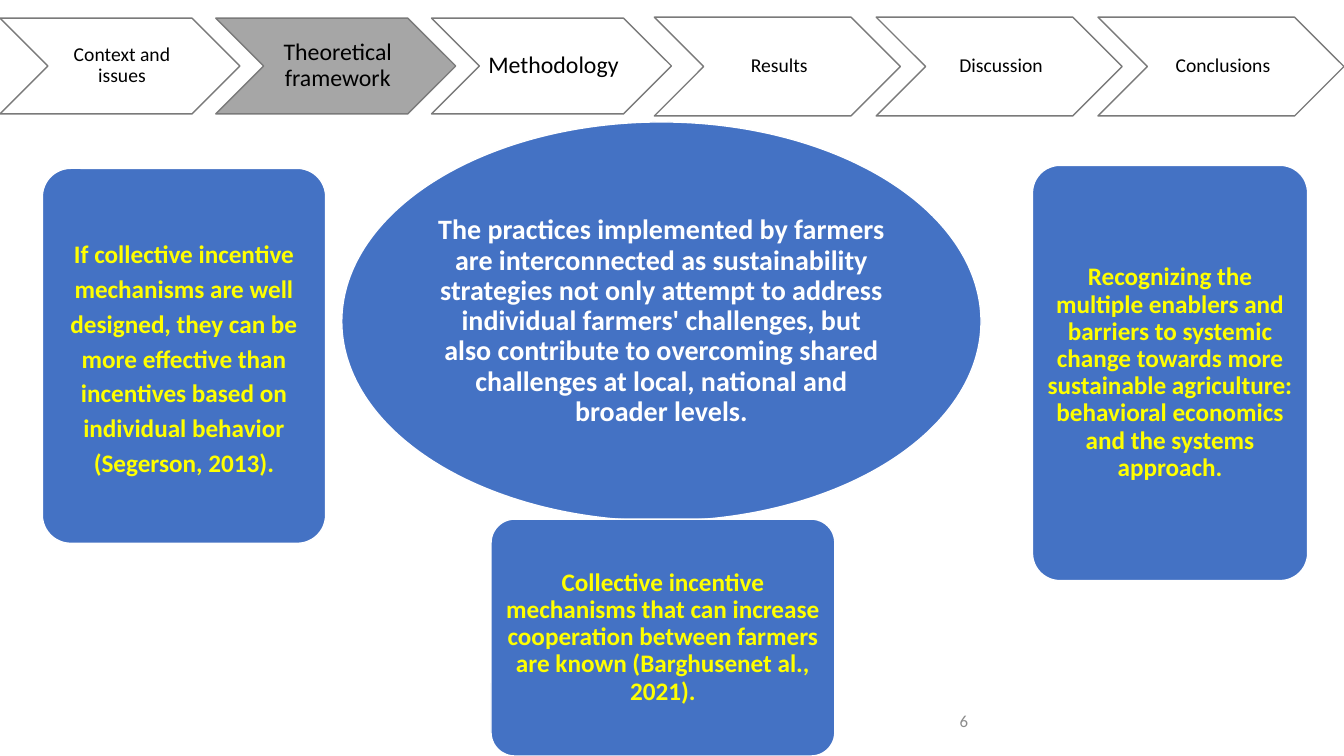
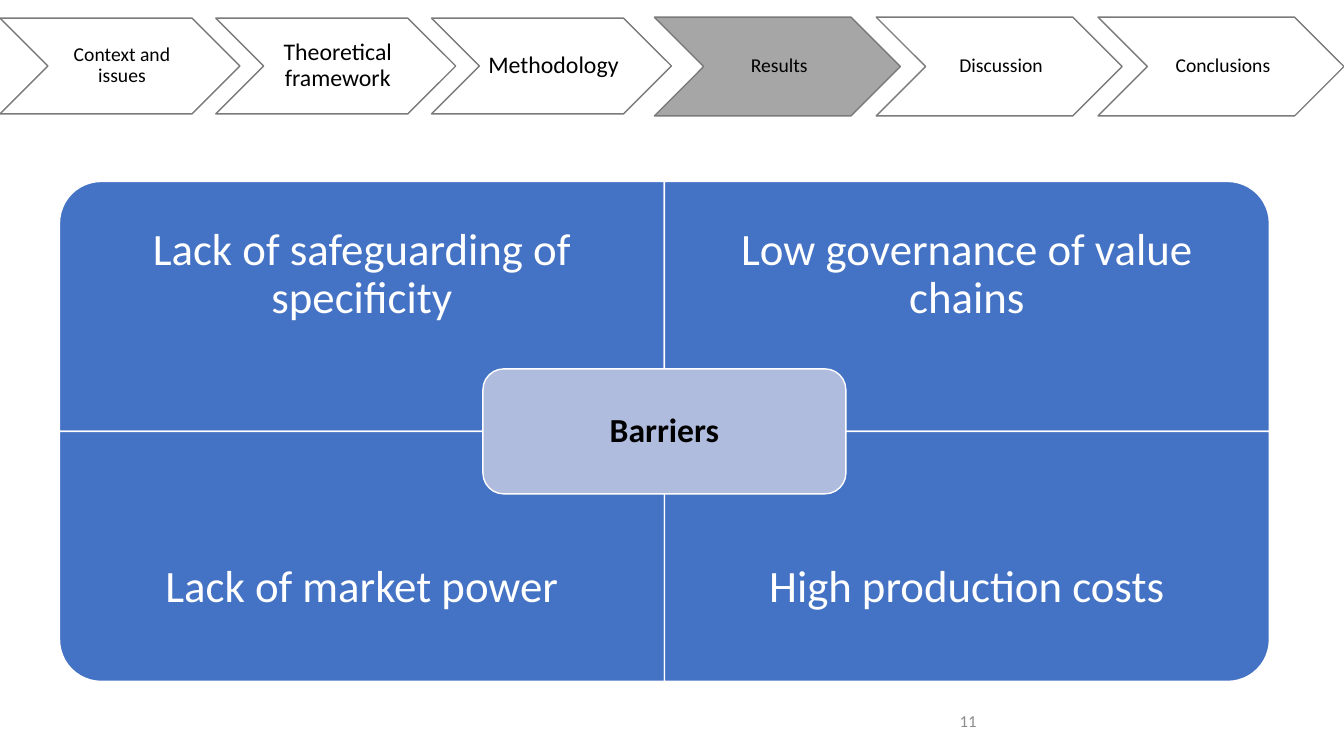
import pptx
import pptx.util
import pptx.dml.color
import pptx.enum.shapes
import pptx.enum.text

Inches = pptx.util.Inches
KIND = pptx.enum.shapes.MSO_SHAPE
BLUE, PALE, GREY, EDGE = "4472C4", "B0BCDE", "A6A6A6", "7A7A7A"
WHITE, BLACK, YELLOW, FAINT = "FFFFFF", "000000", "FFFF00", "8C8C8C"

# Progress bar: left, top, width, height, step, (label, size) list
STEPS = [
    (0, 0.18, 2.38, 0.95, 2.14,
     [("Context and issues", 14), ("Theoretical framework", 17),
      ("Methodology", 17)]),
    (6.49, 0.17, 2.44, 0.98, 2.2,
     [("Results", 14), ("Discussion", 14), ("Conclusions", 14)]),
]

# Theory slide
IDEA = ("The practices implemented by farmers are interconnected as "
        "sustainability strategies not only attempt to address individual "
        "farmers' challenges, but also contribute to overcoming shared "
        "challenges at local, national and broader levels.")
CARDS = [
    ((10.24, 1.64, 2.73, 4.12), 0.9,
     "Recognizing the multiple enablers and barriers to systemic change "
     "towards more sustainable agriculture: behavioral economics and the "
     "systems approach."),
    ((4.87, 5.15, 3.41, 2.35), 0.9,
     "Collective incentive mechanisms that can increase cooperation between "
     "farmers are known (Barghusenet al., 2021)."),
    ((0.42, 1.67, 2.81, 3.72), 1.15,
     "If collective incentive mechanisms are well designed, they can be more "
     "effective than incentives based on individual behavior "
     "(Segerson, 2013)."),
]

# Barriers slide: text, column, row, turn of the rounded corner
QUADS = [
    ("Lack of safeguarding of specificity", 0, 0, 270),
    ("Low governance of value chains", 1, 0, 0),
    ("Lack of market power", 0, 1, 180),
    ("High production costs", 1, 1, 90),
]
GRID = (0.59, 1.8, 6, 2.48)  # left, top, cell width, cell height


def color(code):
    return pptx.dml.color.RGBColor.from_string(code)


def write(shape, text, size, ink, bold=False, pad=(0.05,) * 4, gap=0.9,
          align=pptx.enum.text.PP_ALIGN.CENTER):
    frame = shape.text_frame
    frame.word_wrap = True
    frame.vertical_anchor = pptx.enum.text.MSO_ANCHOR.MIDDLE
    (frame.margin_left, frame.margin_top,
     frame.margin_right, frame.margin_bottom) = map(Inches, pad)
    para = frame.paragraphs[0]
    para.text = text
    para.alignment = align
    para.line_spacing = gap
    para.font.name = "Calibri"
    para.font.size = pptx.util.Pt(size)
    para.font.bold = bold
    para.font.color.rgb = color(ink)


def draw(slide, kind, box, fill, line=WHITE):
    shape = slide.shapes.add_shape(kind, *map(Inches, box))
    shape.shadow.inherit = False
    if fill:
        shape.fill.solid()
        shape.fill.fore_color.rgb = color(fill)
    else:
        shape.fill.background()
    shape.line.color.rgb = color(line)
    shape.line.width = pptx.util.Pt(1)
    return shape


def label(slide, box, *args, **style):
    write(slide.shapes.add_textbox(*map(Inches, box)), *args, **style)


def start(deck, page, active):
    """Add a slide with its page number and progress bar."""
    slide = deck.slides.add_slide(deck.slide_layouts[6])
    label(slide, (9.42, 6.95, 3, 0.4), page, 12, FAINT,
          pad=(0.1, 0.05, 0.1, 0.05), gap=1,
          align=pptx.enum.text.PP_ALIGN.LEFT)
    for left, top, wide, high, step, names in STEPS:
        for i, (name, size) in enumerate(names):
            arrow = draw(slide, KIND.CHEVRON,
                         (left + i * step, top, wide, high),
                         GREY if name == active else None, EDGE)
            write(arrow, name, size, BLACK, pad=(0.06, 0.02, 0.02, 0.02))
    return slide


def theory(deck):
    slide = start(deck, "6", "Theoretical framework")
    oval = draw(slide, KIND.OVAL, (3.39, 1.21, 6.34, 3.96), BLUE)
    write(oval, IDEA, 20, WHITE, True, pad=(0.01,) * 4)
    for box, gap, text in CARDS:
        card = draw(slide, KIND.ROUNDED_RECTANGLE, box, BLUE)
        card.adjustments[0] = 0.1
        write(card, text, 18, YELLOW, True, gap=gap)


def barriers(deck):
    slide = start(deck, "11", "Results")
    left, top, wide, high = GRID
    for text, col, row, turn in QUADS:
        x, y = left + col * wide, top + row * high
        # A quarter turn swaps the sides around the cell's centre
        w, h = (high, wide) if turn % 180 else (wide, high)
        tile = draw(slide, KIND.ROUND_1_RECTANGLE,
                    (x + (wide - w) / 2, y + (high - h) / 2, w, h), BLUE)
        tile.rotation = turn
        # Text keeps to the outer three quarters of the cell
        label(slide, (x, y + row * high / 4, wide, high * 0.75),
              text, 32, WHITE, pad=(0.25,) * 4)
    w, h = wide * 0.6, high / 2
    hub = draw(slide, KIND.ROUNDED_RECTANGLE,
               (left + wide - w / 2, top + high - h / 2, w, h), PALE)
    write(hub, "Barriers", 24, BLACK, True, pad=(0.1,) * 4)


def main():
    deck = pptx.Presentation()
    deck.slide_width, deck.slide_height = Inches(13.33), Inches(7.5)
    theory(deck)
    barriers(deck)
    deck.save("out.pptx")


if __name__ == "__main__":
    main()
